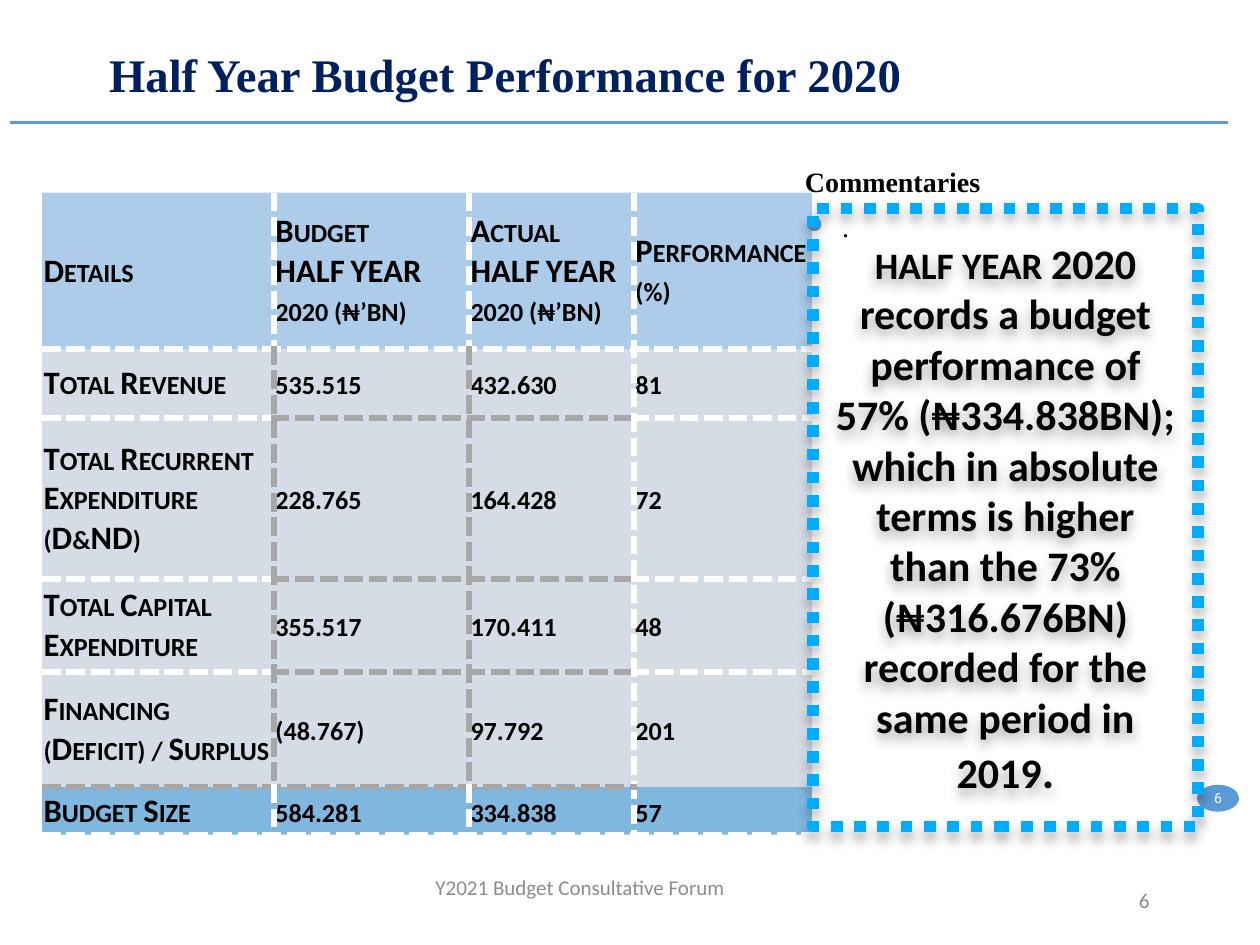
import dataclasses

import lxml.etree
import pptx
import pptx.dml.color
import pptx.enum.dml
import pptx.enum.shapes
import pptx.enum.text
import pptx.oxml.ns
import pptx.util

Pt = pptx.util.Pt
qn = pptx.oxml.ns.qn
ALIGN = pptx.enum.text.PP_ALIGN
MIDDLE = pptx.enum.text.MSO_ANCHOR.MIDDLE
TOP = pptx.enum.text.MSO_ANCHOR.TOP


@dataclasses.dataclass(frozen=True)
class Theme:
    black: str = "000000"
    white: str = "FFFFFF"
    navy: str = "002060"
    blue: str = "5B9BD5"
    total_blue: str = "0070C0"
    card_blue: str = "00ACFF"
    body_fill: str = "D6DCE5"
    border_grey: str = "A7A7A7"
    footer_grey: str = "8C8C8C"
    serif: str = "Times New Roman"
    sans: str = "Calibri"
    badge_font: str = "Roboto"
    title_size: int = 20
    heading_size: int = 12
    table_size: int = 14
    footer_size: int = 9
    badge_size: int = 6


THEME = Theme()


def rgb(color):
    return pptx.dml.color.RGBColor.from_string(color)


def add_xml(parent, tag, **attributes):
    return lxml.etree.SubElement(parent, qn(tag), attributes)


class SlideBuilder:
    def __init__(self, slide, theme):
        self.slide = slide
        self.theme = theme

    def style(self, paragraph, size, font, color, bold=False, align=ALIGN.LEFT):
        paragraph.alignment = align
        paragraph.font.size = Pt(size)
        paragraph.font.name = font
        paragraph.font.bold = bold
        paragraph.font.color.rgb = rgb(color)

    def frame(self, shape, insets, anchor=MIDDLE, wrap=True):
        frame = shape.text_frame
        frame.word_wrap = wrap
        frame.vertical_anchor = anchor
        left, top, right, bottom = map(Pt, insets)
        frame.margin_left, frame.margin_top = left, top
        frame.margin_right, frame.margin_bottom = right, bottom
        return frame

    def text(self, box, words, insets, anchor=MIDDLE, **style):
        shape = self.slide.shapes.add_textbox(*map(Pt, box))
        frame = self.frame(shape, insets, anchor)
        frame.text = words
        self.style(frame.paragraphs[0], **style)
        return frame

    def bullet(self, frame, words, indent, **style):
        paragraph = frame.add_paragraph()
        paragraph.text = words
        properties = paragraph._p.get_or_add_pPr()
        properties.set("marL", str(Pt(indent)))
        properties.set("indent", str(-Pt(indent)))
        add_xml(add_xml(properties, "a:buClr"), "a:srgbClr", val=self.theme.blue)
        add_xml(properties, "a:buSzPct", val="85000")
        add_xml(properties, "a:buChar", char="●")
        self.style(paragraph, **style)
        paragraph.space_before = Pt(3.2)

    def rule(self, left, right, y):
        line = self.slide.shapes.add_connector(
            pptx.enum.shapes.MSO_CONNECTOR.STRAIGHT, Pt(left), Pt(y), Pt(right), Pt(y))
        line.line.color.rgb = rgb(self.theme.blue)
        line.line.width = Pt(1)
        add_xml(line._element.spPr, "a:effectLst")

    def shape(self, kind, box):
        shape = self.slide.shapes.add_shape(kind, *map(Pt, box))
        shape.shadow.inherit = False
        return shape

    def badge(self, box, words):
        shape = self.shape(pptx.enum.shapes.MSO_SHAPE.OVAL, box)
        shape.fill.solid()
        shape.fill.fore_color.rgb = rgb(self.theme.blue)
        shape.line.fill.background()
        frame = self.frame(shape, (0, 0, 0, 0), wrap=False)
        frame.text = words
        self.style(frame.paragraphs[0], self.theme.badge_size, self.theme.badge_font,
                   self.theme.white, align=ALIGN.CENTER)

    def card(self, box, parts):
        shape = self.shape(pptx.enum.shapes.MSO_SHAPE.RECTANGLE, box)
        shape.fill.background()
        shape.line.color.rgb = rgb(self.theme.card_blue)
        shape.line.width = Pt(5)
        shape.line.dash_style = pptx.enum.dml.MSO_LINE.ROUND_DOT
        # Soft shadow straight below
        effects = shape._element.spPr.find(qn("a:effectLst"))
        shadow = add_xml(effects, "a:outerShdw", blurRad=str(Pt(5)), dist=str(Pt(3)),
                         dir="5400000", algn="t", rotWithShape="0")
        color = add_xml(shadow, "a:srgbClr", val=self.theme.black)
        add_xml(color, "a:alpha", val="35000")
        paragraph = self.frame(shape, (9.4,) * 4).paragraphs[0]
        self.style(paragraph, parts[0][1], self.theme.sans, self.theme.black, True, ALIGN.CENTER)
        for words, size in parts:
            run = paragraph.add_run()
            run.text = words
            run.font.size = Pt(size)

    def border(self, cell, position, tag, color):
        line = lxml.etree.Element(qn(tag), {"w": str(Pt(3)), "cap": "flat"})
        if color:
            add_xml(add_xml(line, "a:solidFill"), "a:srgbClr", val=color)
            add_xml(line, "a:prstDash", val="sysDash")
        else:
            add_xml(line, "a:noFill")
        cell._tc.get_or_add_tcPr().insert(position, line)

    def cell(self, cell, words, fill, alpha, borders):
        cell.text = words
        cell.vertical_anchor = MIDDLE
        cell.margin_left = cell.margin_right = cell.margin_top = cell.margin_bottom = Pt(0.7)
        paragraph = cell.text_frame.paragraphs[0]
        self.style(paragraph, self.theme.table_size, self.theme.sans, self.theme.black, True)
        paragraph.font._rPr.set("cap", "small")
        cell.fill.solid()
        cell.fill.fore_color.rgb = rgb(fill)
        if alpha:
            color = cell._tc.tcPr.find(".//" + qn("a:srgbClr"))
            add_xml(color, "a:alpha", val=str(alpha * 1000))
        for position, (tag, line_color) in enumerate(zip(("a:lnL", "a:lnR", "a:lnT", "a:lnB"), borders)):
            self.border(cell, position, tag, line_color)

    def table(self, left, top, widths, heights, rows):
        theme, last_row, last_column = self.theme, len(rows) - 1, len(widths) - 1
        table = self.slide.shapes.add_table(
            len(rows), len(widths), Pt(left), Pt(top), Pt(sum(widths)), Pt(sum(heights))).table
        table.first_row = table.horz_banding = False
        for column, width in zip(table.columns, widths):
            column.width = Pt(width)
        for row, height in zip(table.rows, heights):
            row.height = Pt(height)

        # Grey lines frame the figures; white lines split everything else
        def upright(row, edge):
            if edge in (0, last_column + 1):
                return None
            return theme.border_grey if 0 < row < last_row and edge < last_column else theme.white

        def level(edge, column):
            if edge == 0 or (edge == last_row and column == last_column):
                return None
            grey = edge == last_row or (1 < edge < last_row and 0 < column < last_column)
            return theme.border_grey if grey else theme.white

        fills = {0: (theme.blue, 50), last_row: (theme.total_blue, 50)}
        for r, row in enumerate(rows):
            for c, words in enumerate(row):
                borders = (upright(r, c), upright(r, c + 1), level(r, c), level(r + 1, c))
                self.cell(table.cell(r, c), words, *fills.get(r, (theme.body_fill, None)), borders)


def main():
    presentation = pptx.Presentation()
    presentation.slide_width, presentation.slide_height = Pt(540), Pt(405)
    builder = SlideBuilder(presentation.slides.add_slide(presentation.slide_layouts[6]), THEME)

    # Rule and page badge
    builder.rule(4.5, 526.5, 52.5)
    builder.badge((513, 336.4, 18, 11.5), "6")

    # Commentary heading
    heading = dict(size=THEME.heading_size, font=THEME.serif, color=THEME.black)
    commentary = builder.text((340, 66.2, 180, 238.3), "Commentaries", (5, 3, 5, 3), TOP,
                              bold=True, **heading)
    builder.bullet(commentary, ".", 16, **heading)
    for paragraph in commentary.paragraphs:
        paragraph.line_spacing = 1.1

    # Title
    builder.text((41.8, 16.6, 455.8, 31.7), "Half Year Budget Performance for 2020", (5, 3, 5, 5),
                 size=THEME.title_size, font=THEME.serif, color=THEME.navy, bold=True)

    # Footer
    footer = dict(size=THEME.footer_size, font=THEME.sans, color=THEME.footer_grey)
    builder.text((178.6, 375.1, 182.2, 21.6), "Y2021 Budget Consultative Forum", (0, 0, 42.4, 11),
                 align=ALIGN.CENTER, **footer)
    builder.text((378, 375.1, 121.7, 21.6), "6", (7.2, 3.6, 7.2, 3.6), align=ALIGN.RIGHT, **footer)

    # Budget table
    builder.table(18, 82.6, (99.4, 83.6, 70.7, 76.3), (67, 29.6, 69, 39.7, 49.5, 20.4), (
        ("Details", "Budget\vHALF YEAR 2020 (₦’bn)", "Actual\vHALF YEAR 2020 (₦’bn)", "Performance\v(%)"),
        ("Total Revenue", "535.515", "432.630", "81"),
        ("Total Recurrent Expenditure (D&ND)", "228.765", "164.428", "72"),
        ("Total Capital Expenditure", "355.517", "170.411", "48"),
        ("Financing (Deficit) / Surplus", "(48.767)", "97.792", "201"),
        ("Budget Size", "584.281", "334.838", "57")))

    # Commentary card
    builder.card((348.5, 89.3, 164.9, 265), (
        ("HALF YEAR ", 16),
        ("2020 records a budget performance of 57% (₦334.838BN); which in absolute terms is higher "
         "than the 73% (₦316.676BN) recorded for the same period in 2019", 18),
        (".", 20)))
    presentation.save("out.pptx")


if __name__ == "__main__":
    main()
